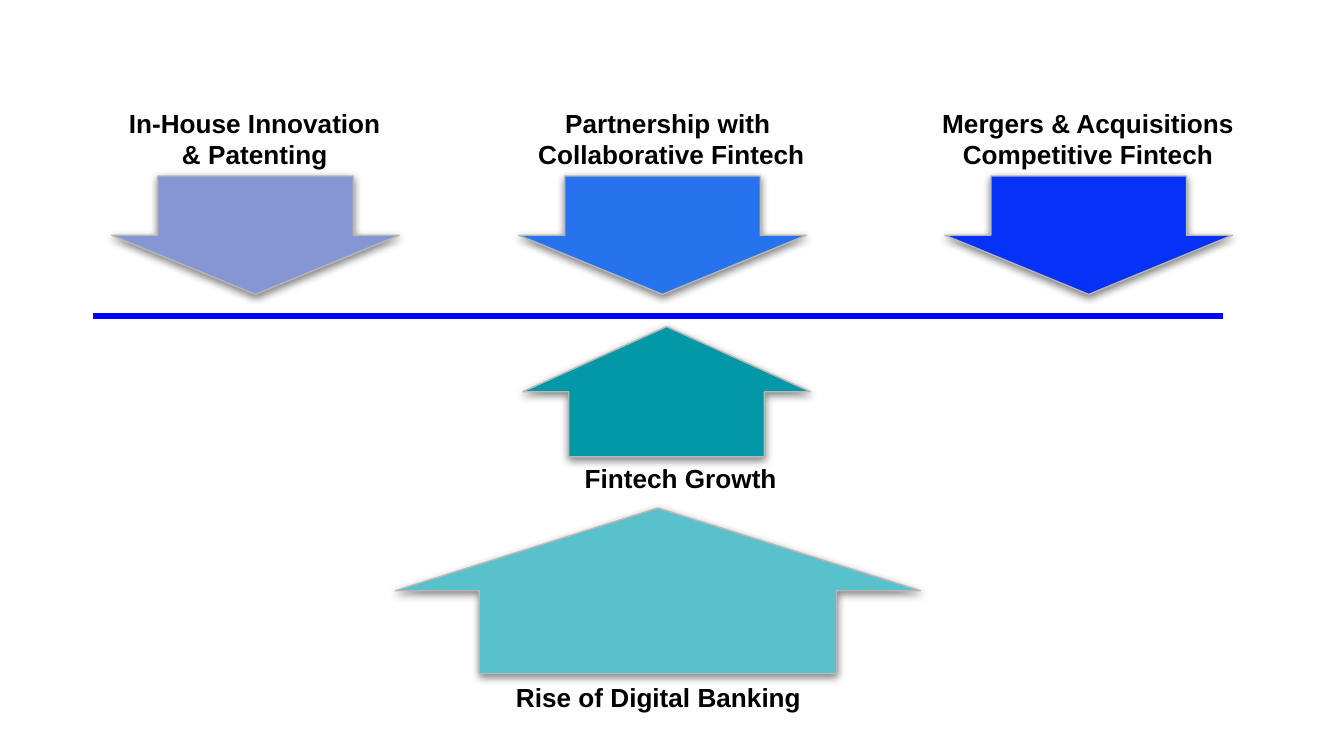
from dataclasses import dataclass

from lxml.etree import SubElement
from pptx import Presentation
from pptx.dml.color import RGBColor
from pptx.enum.shapes import MSO_CONNECTOR, MSO_SHAPE
from pptx.enum.text import MSO_AUTO_SIZE, PP_ALIGN
from pptx.oxml.ns import qn
from pptx.util import Pt


@dataclass(frozen=True)
class Theme:
    """Hold the colours and type sizes of the slide."""

    font: str = "Arial"
    size: float = 14
    ink: str = "000000"
    edge: str = "B7B7B7"
    rule: str = "0000FF"
    house: str = "8696D5"
    partner: str = "2773EE"
    merger: str = "0632F8"
    growth: str = "0097A7"
    rise: str = "58C1CC"


THEME = Theme()


def style(item, values):
    """Set each named value on an object."""
    for name, value in values.items():
        setattr(item, name, value)


def color(code):
    """Turn a hex code into a colour."""
    return RGBColor.from_string(code)


def add_shade(shape):
    """Give a shape a soft shadow that falls straight down."""
    shape.shadow.inherit = False
    effects = shape._element.spPr.find(qn("a:effectLst"))
    shade = SubElement(
        effects, qn("a:outerShdw"), blurRad=str(Pt(4.5)), dist=str(Pt(1.5)),
        dir="5400000", algn="bl", rotWithShape="0")
    tint = SubElement(shade, qn("a:srgbClr"), val=THEME.ink)
    SubElement(tint, qn("a:alpha"), val="50000")


def add_arrow(slide, kind, box, fill):
    """Draw one wide block arrow."""
    arrow = slide.shapes.add_shape(kind, *map(Pt, box))
    arrow.adjustments[0] = 0.68
    arrow.adjustments[1] = 0.5
    arrow.fill.solid()
    arrow.fill.fore_color.rgb = color(fill)
    arrow.line.color.rgb = color(THEME.edge)
    arrow.line.width = Pt(0.75)
    add_shade(arrow)


def add_label(slide, box, text):
    """Write a bold centred label, one paragraph a line."""
    frame = slide.shapes.add_textbox(*map(Pt, box)).text_frame
    sides = ("left", "top", "right", "bottom")
    style(frame, {f"margin_{side}": Pt(7.2) for side in sides})
    style(frame, {"word_wrap": True, "text": text,
                  "auto_size": MSO_AUTO_SIZE.SHAPE_TO_FIT_TEXT})
    for para in frame.paragraphs:
        para.alignment = PP_ALIGN.CENTER
        style(para.font, {"name": THEME.font, "size": Pt(THEME.size), "bold": True})
        para.font.color.rgb = color(THEME.ink)


def add_rule(slide, left, right, top):
    """Draw the level line between the two groups of arrows."""
    rule = slide.shapes.add_connector(
        MSO_CONNECTOR.STRAIGHT, Pt(left), Pt(top), Pt(right), Pt(top))
    rule.line.color.rgb = color(THEME.rule)
    rule.line.width = Pt(3)
    SubElement(rule._element.spPr, qn("a:effectLst"))


def main():
    """Build and save the slide."""
    deck = Presentation()
    style(deck, {"slide_width": Pt(720), "slide_height": Pt(405)})
    slide = deck.slides.add_slide(deck.slide_layouts[6])

    forces = (
        ((211.7, 272.2, 281.5, 88.6), THEME.rise,
         (67, 357.8, 571.7, 31.7), "Rise of Digital Banking"),
        ((280.1, 175, 154.1, 69.8), THEME.growth,
         (241.2, 240.5, 247, 31.7), "Fintech Growth"),
    )
    for box, fill, place, text in forces:
        add_arrow(slide, MSO_SHAPE.UP_ARROW, box, fill)
        add_label(slide, place, text)

    add_rule(slide, 49.7, 655.2, 169.2)

    answers = (
        (59.8, THEME.house, "In-House Innovation\n& Patenting"),
        (277.9, THEME.partner, "Partnership with \nCollaborative Fintech"),
        (506.2, THEME.merger, "Mergers & Acquisitions\nCompetitive Fintech"),
    )
    for step, (left, fill, text) in enumerate(answers):
        add_label(slide, (13 + 223.2 * step, 50.4, 247, 48.2), text)
        add_arrow(slide, MSO_SHAPE.DOWN_ARROW, (left, 94.3, 154.1, 63.4), fill)

    deck.save("out.pptx")


if __name__ == "__main__":
    main()
